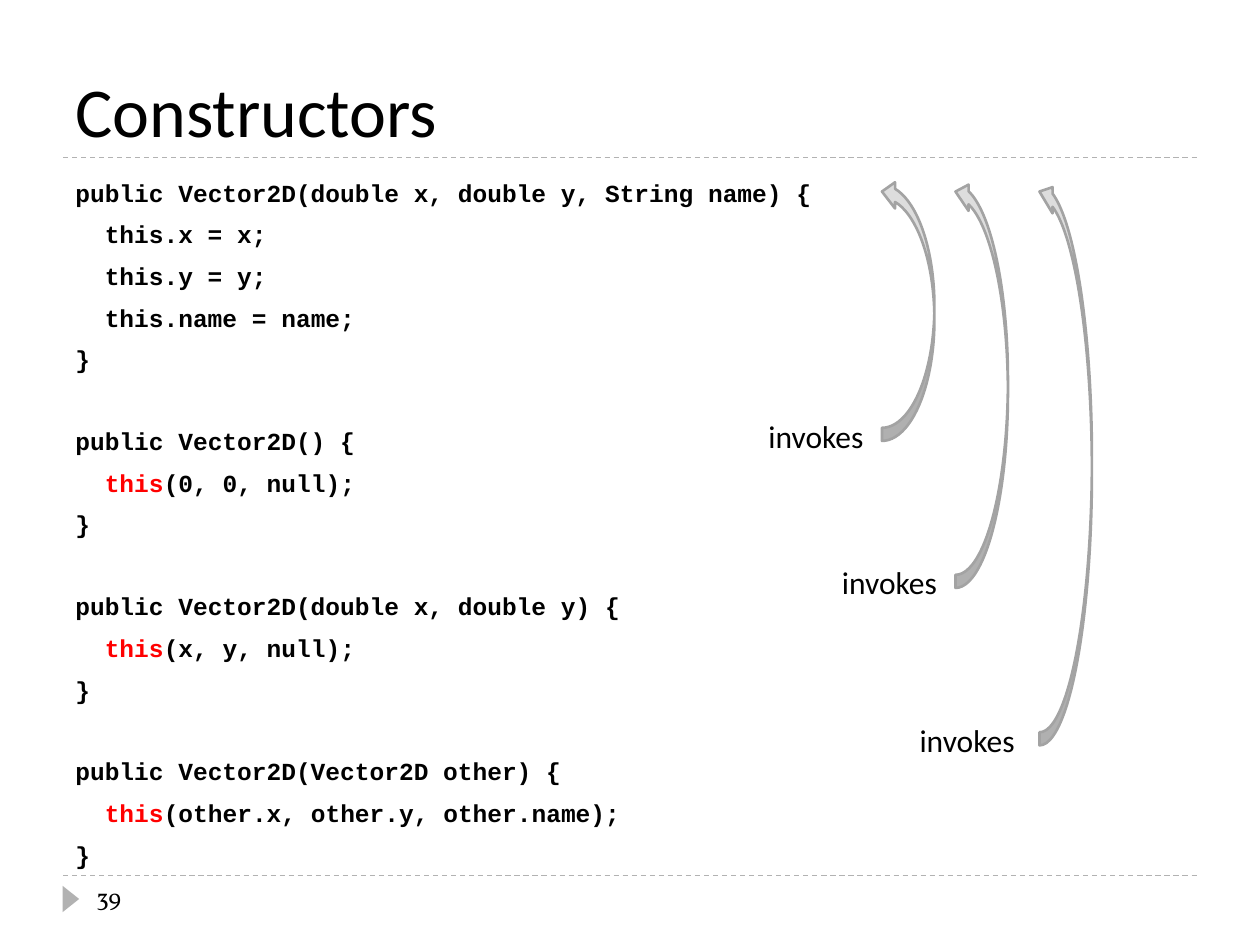
"""Build the slide on constructors that invoke one another."""
from pptx import Presentation
from pptx.dml.color import RGBColor
from pptx.enum import dml, shapes, text
from pptx.oxml.ns import qn
from pptx.util import Pt


def color(value):
    return RGBColor.from_string(value)


def add_text(left, top, width, height, content, font, size, wrap=True):
    frame = slide.shapes.add_textbox(Pt(left), Pt(top), Pt(width), Pt(height)).text_frame
    frame.word_wrap = wrap
    frame.text = content
    for paragraph in frame.paragraphs:
        for run in paragraph.runs:
            run.font.name = font
            run.font.size = Pt(size)
            run.font.color.rgb = color("000000")
    return frame


prs = Presentation()
prs.slide_width, prs.slide_height = Pt(720), Pt(540)
slide = prs.slides.add_slide(prs.slide_layouts[6])

for y in (500.4, 90):
    rule = slide.shapes.add_connector(shapes.MSO_CONNECTOR.STRAIGHT, Pt(36), Pt(y), Pt(684), Pt(y))
    rule.line.color.rgb = color("B2B2B2")
    rule.line.width = Pt(0.75)
    rule.line.dash_style = dml.MSO_LINE.DASH
    properties = rule._element.spPr
    properties.append(properties.makeelement(qn("a:effectLst"), {}))

marker = slide.shapes.add_shape(shapes.MSO_SHAPE.ISOSCELES_TRIANGLE, Pt(33), Pt(509), Pt(15), Pt(9.4))
marker.rotation = 90
marker.shadow.inherit = False
marker.fill.solid()
marker.fill.fore_color.rgb = color("B2B2B2")
marker.line.fill.background()

title = add_text(36, 12, 648, 78, "Constructors", "Calibri", 40)
title.vertical_anchor = text.MSO_ANCHOR.BOTTOM
add_text(48, 500.4, 156, 28.8, "39", "Vollkorn", 14)

constructors = [
    ("double x, double y, String name", ["this.x = x;", "this.y = y;", "this.name = name;"]),
    ("", ["this(0, 0, null);"]),
    ("double x, double y", ["this(x, y, null);"]),
    ("Vector2D other", ["this(other.x, other.y, other.name);"]),
]
code_lines = []
for parameters, statements in constructors:
    code_lines += [f"public Vector2D({parameters}) {{", *statements, "}"]

code = add_text(36, 96, 648, 389, "\n".join(code_lines), "Courier New", 14)
code.margin_top = Pt(5.5)
for number, line in enumerate(code.paragraphs):
    content = line.text
    starts_block = content.startswith("public")
    if number:
        line.space_before = Pt(29.9 if starts_block else 7)
    if content.startswith("this"):
        line._p.get_or_add_pPr().set("marL", str(Pt(16.8)))
    line.runs[0].font.bold = True
    if content.startswith("this("):
        keyword = line.runs[0]
        keyword.text = "this"
        keyword.font.color.rgb = color("FF0000")
        call = line.add_run()
        call.text = content[len("this"):]
        call.font.name = "Courier New"
        call.font.size = Pt(14)
        call.font.bold = True
        call.font.color.rgb = color("000000")

for arrow_left, arrow_height, label_left, label_top in (
    (504, 150, 432, 234.7),
    (546, 234, 474, 318.2),
    (594, 324, 518.4, 408.2),
):
    arrow = slide.shapes.add_shape(
        shapes.MSO_SHAPE.CURVED_LEFT_ARROW, Pt(arrow_left), Pt(102), Pt(30), Pt(arrow_height))
    arrow._element.spPr.xfrm.set("flipV", "1")
    arrow.shadow.inherit = False
    arrow.fill.solid()
    arrow.fill.fore_color.rgb = color("DDDDDD")
    arrow.line.color.rgb = color("A3A3A3")
    arrow.line.width = Pt(1.5)
    label = add_text(label_left, label_top, 69, 29, "invokes", "Calibri", 18, wrap=False)
    label.auto_size = text.MSO_AUTO_SIZE.SHAPE_TO_FIT_TEXT

prs.save("out.pptx")
